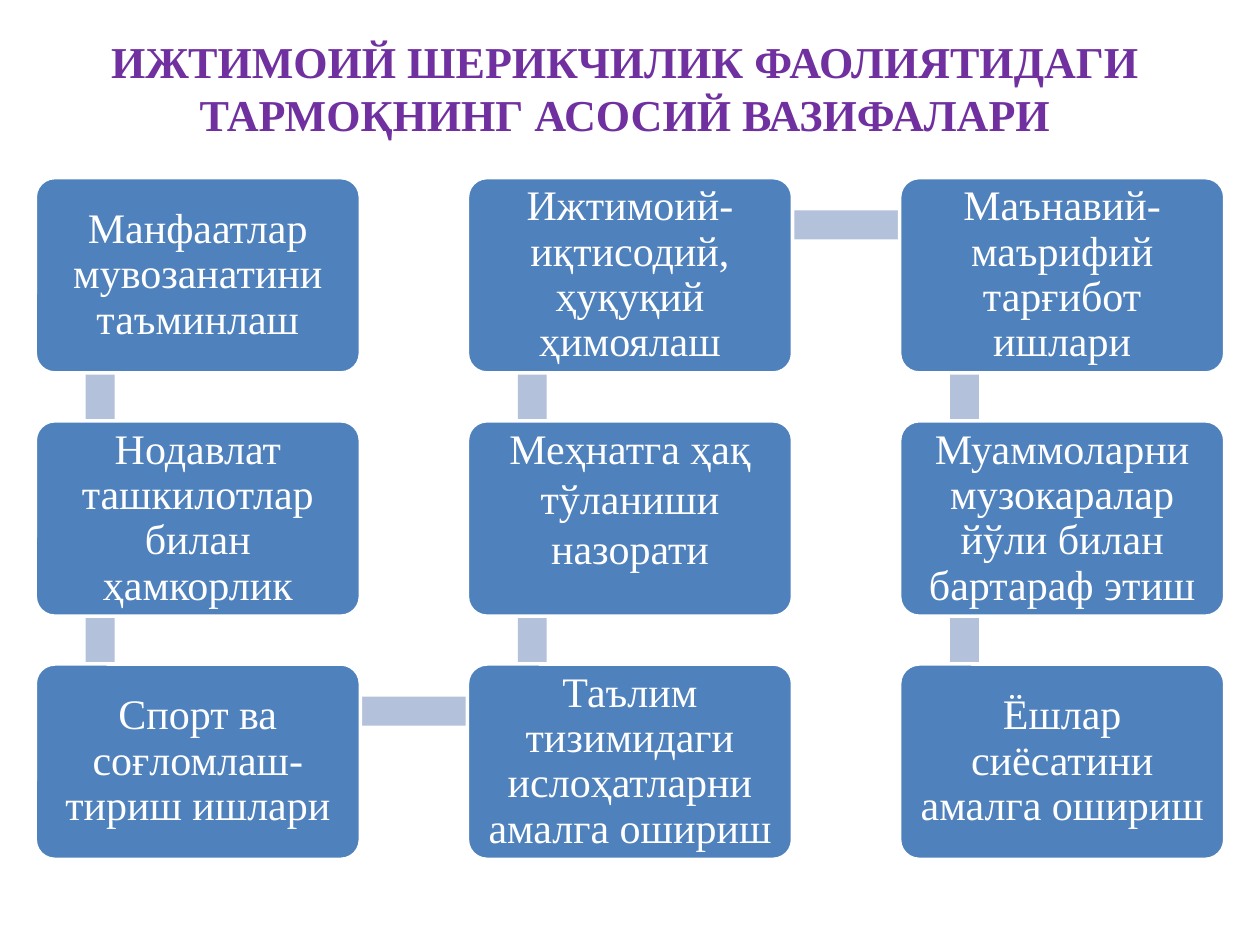
from pptx import Presentation
from pptx.dml.color import RGBColor
from pptx.enum.shapes import MSO_SHAPE
from pptx.enum.text import MSO_ANCHOR, PP_ALIGN
from pptx.util import Inches, Pt

TITLE = "ИЖТИМОИЙ ШЕРИКЧИЛИК ФАОЛИЯТИДАГИ ТАРМОҚНИНГ АСОСИЙ ВАЗИФАЛАРИ"
WAGES = "Меҳнатга ҳақ тўланиши назорати"
# Tasks in order along the winding path: down, up, down
TASKS = [
    "Манфаатлар мувозанатини таъминлаш",
    "Нодавлат ташкилотлар билан ҳамкорлик",
    "Спорт ва соғломлаш-тириш ишлари",
    "Таълим тизимидаги ислоҳатларни амалга ошириш",
    WAGES,
    "Ижтимоий-иқтисодий, ҳуқуқий ҳимоялаш",
    "Маънавий-маърифий тарғибот ишлари",
    "Муаммоларни музокаралар йўли билан бартараф этиш",
    "Ёшлар сиёсатини амалга ошириш",
]
COLORS = {"title": "7030A0", "box": "4F81BD", "bar": "B3C1DB", "white": "FFFFFF"}
FONT = "Times New Roman"

ROWS = 3
LEFT, TOP = 0.28, 1.41
BOX_WIDTH, BOX_HEIGHT = 2.58, 1.55
STEP_X, STEP_Y = 3.43, 1.93
BAR = 0.23


def color(name):
    return RGBColor.from_string(COLORS[name])


def cell_origin(index):
    column, row = divmod(index, ROWS)
    if column % 2:
        row = ROWS - 1 - row
    return LEFT + column * STEP_X, TOP + row * STEP_Y


def add_block(page, kind, left, top, width, height, fill):
    block = page.shapes.add_shape(
        kind, Inches(left), Inches(top), Inches(width), Inches(height))
    block.shadow.inherit = False
    block.fill.solid()
    block.fill.fore_color.rgb = color(fill)
    block.line.fill.background()
    return block


def write(frame, text, size, fill, bold=False, spacing=1.0):
    frame.word_wrap = True
    frame.vertical_anchor = MSO_ANCHOR.MIDDLE
    para = frame.paragraphs[0]
    para.text = text
    para.alignment = PP_ALIGN.CENTER
    para.line_spacing = spacing
    para.font.name = FONT
    para.font.size = Pt(size)
    para.font.bold = bold
    para.font.color.rgb = color(fill)


def add_bar(page, start, end):
    left, top = min(start, end)
    if start[0] == end[0]:
        add_block(page, MSO_SHAPE.RECTANGLE, left + 0.4, top + 0.39,
                  BAR, STEP_Y, "bar")
    else:
        add_block(page, MSO_SHAPE.RECTANGLE, left + 0.53, top + 0.26,
                  STEP_X, BAR, "bar")


def add_task(page, origin, text):
    box = add_block(page, MSO_SHAPE.ROUNDED_RECTANGLE, *origin,
                    BOX_WIDTH, BOX_HEIGHT, "box")
    box.adjustments[0] = 0.1
    box.line.color.rgb = color("white")
    box.line.width = Pt(2)
    frame = box.text_frame
    frame.margin_left = frame.margin_right = Inches(0.1)
    raised = text == WAGES
    frame.margin_top = Inches(0 if raised else 0.1)
    frame.margin_bottom = Inches(0.33 if raised else 0.1)
    write(frame, text, 24, "white", spacing=1.0 if raised else 0.9)


def main():
    deck = Presentation()
    deck.slide_width, deck.slide_height = Inches(10), Inches(7.5)
    page = deck.slides.add_slide(deck.slide_layouts[6])

    # Title, set slightly above the middle of its box
    title = page.shapes.add_textbox(
        Inches(0.42), Inches(0.12), Inches(9.08), Inches(1.55))
    title.text_frame.margin_bottom = Inches(0.45)
    write(title.text_frame, TITLE, 25.2, "title", bold=True)

    # Linking bars go behind the task boxes
    origins = [cell_origin(index) for index in range(len(TASKS))]
    for start, end in zip(origins, origins[1:]):
        add_bar(page, start, end)
    for origin, text in zip(origins, TASKS):
        add_task(page, origin, text)

    deck.save("out.pptx")


if __name__ == "__main__":
    main()
